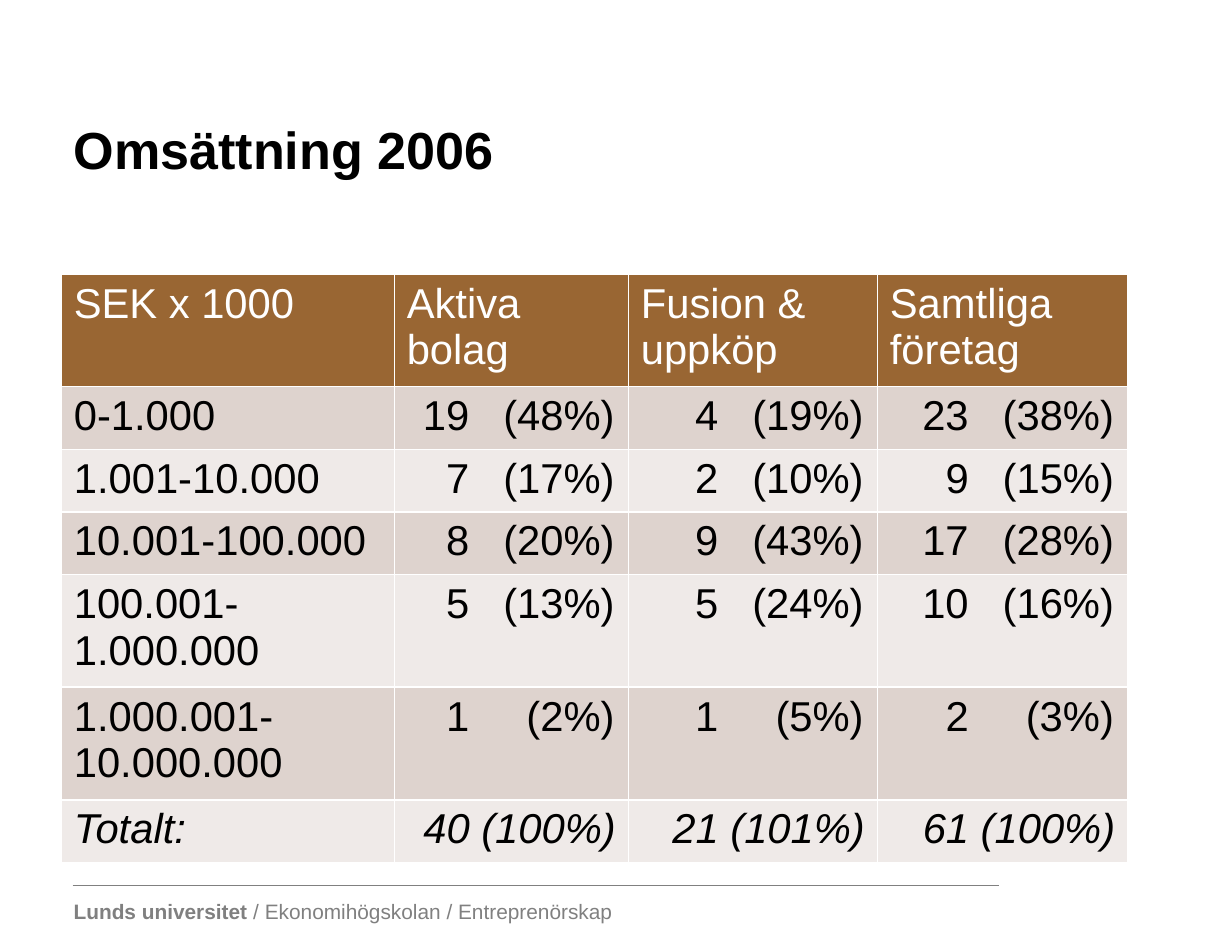
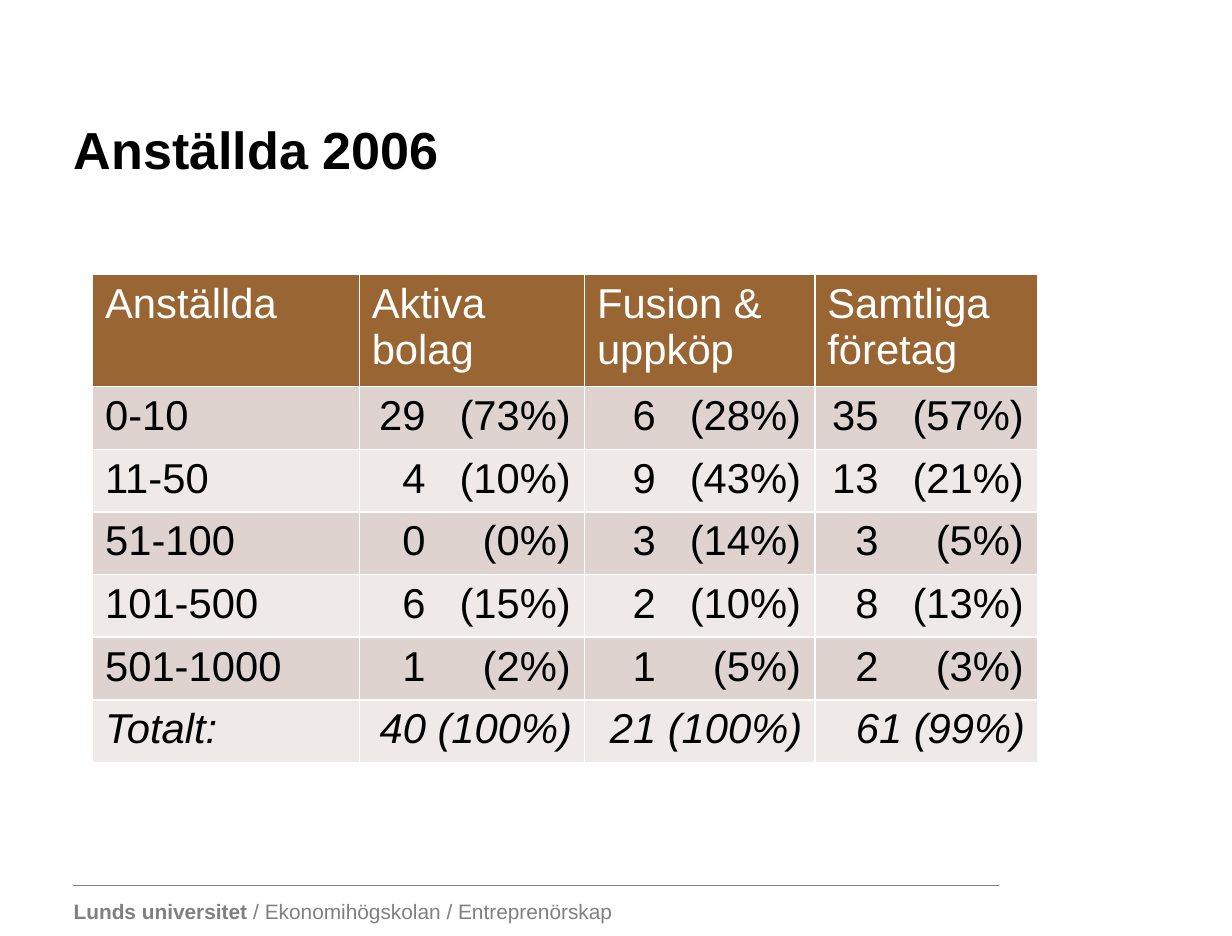
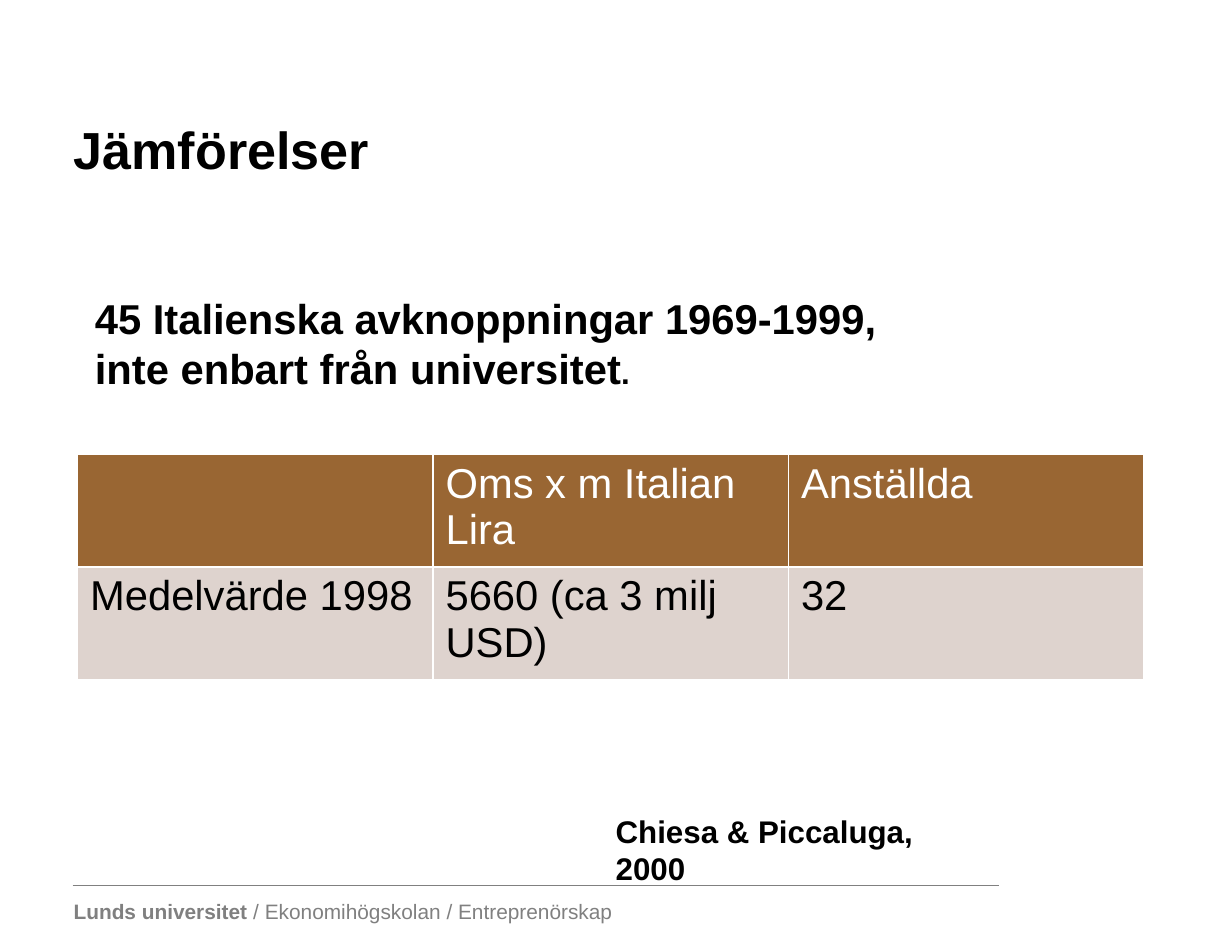
from lxml import etree
from pptx import Presentation
from pptx.dml.color import RGBColor
from pptx.enum.shapes import MSO_CONNECTOR
from pptx.enum.text import MSO_ANCHOR, PP_ALIGN
from pptx.oxml.ns import qn
from pptx.util import Cm, Inches, Pt

STRAIGHT = MSO_CONNECTOR.STRAIGHT
MIDDLE, TOP = MSO_ANCHOR.MIDDLE, MSO_ANCHOR.TOP
RIGHT = PP_ALIGN.RIGHT

FONT = "Arial"
COLORS = {
    "text": "000000",
    "footer": "808080",
    "header": "996633",
    "band_dark": "DED3CE",
    "band_light": "EFEAE8",
    "white": "FFFFFF",
}
CELL_MARGIN = 0.1
COUNT_OFFSET = 1.17  # from the right edge of the counts to that of the shares
GROUPS = ["Aktiva bolag", "Fusion & uppköp", "Samtliga företag"]

TURNOVER = [
    ["SEK x 1000", *GROUPS],
    ["0-1.000", "19 (48%)", "4 (19%)", "23 (38%)"],
    ["1.001-10.000", "7 (17%)", "2 (10%)", "9 (15%)"],
    ["10.001-100.000", "8 (20%)", "9 (43%)", "17 (28%)"],
    ["100.001-1.000.000", "5 (13%)", "5 (24%)", "10 (16%)"],
    ["1.000.001-10.000.000", "1 (2%)", "1 (5%)", "2 (3%)"],
    ["Totalt:", "40 (100%)", "21 (101%)", "61 (100%)"],
]
EMPLOYEES = [
    ["Anställda", *GROUPS],
    ["0-10", "29 (73%)", "6 (28%)", "35 (57%)"],
    ["11-50", "4 (10%)", "9 (43%)", "13 (21%)"],
    ["51-100", "0 (0%)", "3 (14%)", "3 (5%)"],
    ["101-500", "6 (15%)", "2 (10%)", "8 (13%)"],
    ["501-1000", "1 (2%)", "1 (5%)", "2 (3%)"],
    ["Totalt:", "40 (100%)", "21 (100%)", "61 (99%)"],
]
COMPARISON = [
    ["", "Oms x m Italian Lira", "Anställda"],
    ["Medelvärde 1998", "5660 (ca 3 milj USD)", "32"],
]


def rgb(name):
    return RGBColor.from_string(COLORS[name])


def format_font(font, size, color="text", bold=False, italic=False):
    font.name = FONT
    font.size = Pt(size)
    font.bold = bold
    font.italic = italic
    font.color.rgb = rgb(color)


def add_text(slide, box, paragraphs, color="text", anchor=TOP, wrap=True):
    """Each paragraph is a list of (text, size, bold) runs."""
    frame = slide.shapes.add_textbox(*map(Inches, box)).text_frame
    frame.word_wrap = wrap
    frame.vertical_anchor = anchor
    for index, runs in enumerate(paragraphs):
        paragraph = frame.add_paragraph() if index else frame.paragraphs[0]
        for text, size, bold in runs:
            run = paragraph.add_run()
            run.text = text
            format_font(run.font, size, color, bold)


def add_footer(slide):
    rule = slide.shapes.add_connector(
        STRAIGHT, Inches(0.58), Inches(7.08), Inches(7.98), Inches(7.08))
    rule.line.color.rgb = rgb("footer")
    rule.line.width = Pt(0.5)
    etree.SubElement(rule._element.spPr, qn("a:effectLst"))
    add_text(slide, (0.49, 7.13, 4.64, 0.3),
             [[("Lunds universitet", 12, True),
               (" / Ekonomihögskolan / Entreprenörskap", 12, False)]],
             color="footer", wrap=False)


def add_titled_slide(deck, title):
    slide = deck.slides.add_slide(deck.slide_layouts[6])
    add_footer(slide)
    add_text(slide, (0.49, 0.56, 8.86, 1.25), [[(title, 30, True)]], anchor=MIDDLE)
    return slide


def set_borders(cell):
    properties = cell._tc.get_or_add_tcPr()
    for position, side in enumerate(("lnL", "lnR", "lnT", "lnB")):
        line = etree.Element(qn(f"a:{side}"), w=str(Pt(1)))
        fill = etree.SubElement(line, qn("a:solidFill"))
        etree.SubElement(fill, qn("a:srgbClr"), val=COLORS["white"])
        properties.insert(position, line)


def set_right_tabs(paragraph, positions):
    tabs = etree.SubElement(paragraph._p.get_or_add_pPr(), qn("a:tabLst"))
    for position in positions:
        etree.SubElement(tabs, qn("a:tab"), pos=str(Inches(position)), algn="r")


def fill_cell(cell, text, fill, color, italic):
    cell.fill.solid()
    cell.fill.fore_color.rgb = rgb(fill)
    set_borders(cell)
    cell.text_frame.text = text
    for run in cell.text_frame.paragraphs[0].runs:
        format_font(run.font, 24, color, italic=italic)


def add_data_table(slide, left, top, widths, row_height, rows, shares=False):
    """With shares, body cells hold a count and its share, aligned to the right."""
    table = slide.shapes.add_table(
        len(rows), len(widths), Inches(left), Inches(top),
        Inches(sum(widths)), Inches(row_height * len(rows))).table
    for column, width in zip(table.columns, widths):
        column.width = Inches(width)
    for r, row in enumerate(rows):
        table.rows[r].height = Inches(row_height)
        is_total = row[0] == "Totalt:"
        fill = "header" if r == 0 else "band_dark" if r % 2 else "band_light"
        color = "white" if r == 0 else "text"
        for c, text in enumerate(row):
            cell = table.cell(r, c)
            has_share = shares and r > 0 and c > 0
            if has_share and not is_total:
                text = "\t" + text.replace(" (", "\t(")
            fill_cell(cell, text, fill, color, is_total)
            paragraph = cell.text_frame.paragraphs[0]
            if has_share and is_total:
                paragraph.alignment = RIGHT
            elif has_share:
                inner = widths[c] - 2 * CELL_MARGIN
                set_right_tabs(paragraph, (inner - COUNT_OFFSET, inner - 0.01))


def main():
    deck = Presentation()
    deck.slide_width = Cm(25)
    deck.slide_height = Cm(19)

    # Turnover
    slide = add_titled_slide(deck, "Omsättning 2006")
    add_data_table(slide, 0.49, 2.19, [2.66, 1.87, 1.99, 2], 0.41, TURNOVER, shares=True)

    # Employees
    slide = add_titled_slide(deck, "Anställda 2006")
    add_data_table(slide, 0.74, 2.19, [2.13, 1.8, 1.84, 1.78], 0.44, EMPLOYEES, shares=True)

    # Comparison with Italian spin-offs
    slide = add_titled_slide(deck, "Jämförelser")
    add_data_table(slide, 0.62, 3.63, [2.84] * 3, 0.41, COMPARISON)
    add_text(slide, (0.66, 2.29, 6.51, 0.91),
             [[("45 Italienska avknoppningar 1969-1999,", 24, True)],
              [("inte enbart från universitet", 24, True), (".", 18, True)]],
             wrap=False)
    add_text(slide, (4.82, 6.44, 3.09, 0.4), [[("Chiesa & Piccaluga, 2000", 18, True)]])

    deck.save("out.pptx")


if __name__ == "__main__":
    main()
